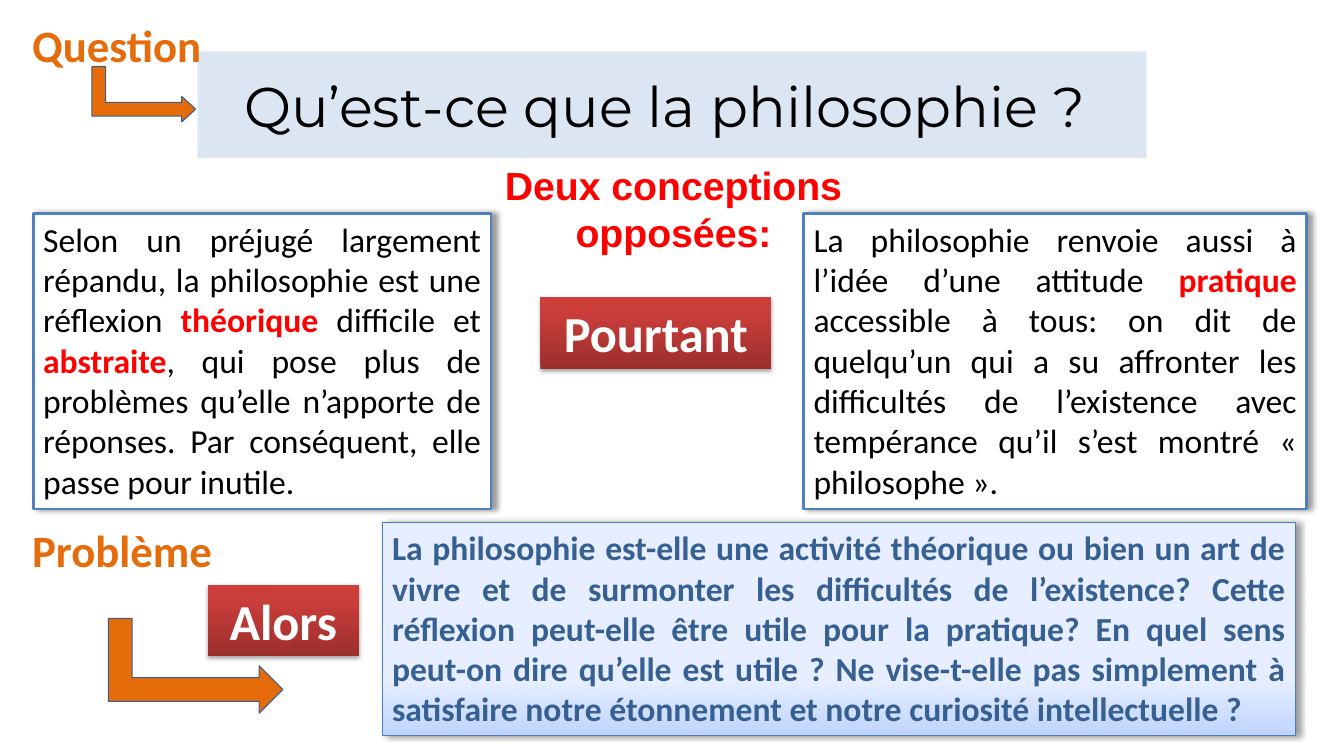
from dataclasses import dataclass

from lxml import etree
from pptx import Presentation
from pptx.dml.color import RGBColor
from pptx.enum.shapes import MSO_SHAPE
from pptx.enum.text import MSO_ANCHOR, MSO_AUTO_SIZE, PP_ALIGN
from pptx.oxml.ns import qn
from pptx.util import Inches, Pt

RECT = MSO_SHAPE.RECTANGLE
BENT_ARROW = MSO_SHAPE.BENT_UP_ARROW
TOP, MIDDLE = MSO_ANCHOR.TOP, MSO_ANCHOR.MIDDLE
GROW = MSO_AUTO_SIZE.SHAPE_TO_FIT_TEXT
LEFT, CENTER, JUSTIFY = PP_ALIGN.LEFT, PP_ALIGN.CENTER, PP_ALIGN.JUSTIFY

COLORS = {
    "black": "000000",
    "white": "FFFFFF",
    "red": "FF0000",
    "orange": "E46C0A",
    "arrow_line": "3A5F8C",
    "title_fill": "DCE6F2",
    "box_line": "4F81BD",
    "problem_line": "4B7EBC",
    "problem_text": "376092",
    "problem_bottom": "BFD4FF",
    "problem_top": "E6EEFF",
    "link_bottom": "9C2F2D",
    "link_top": "CB3E3A",
}


@dataclass(frozen=True)
class Shadow:
    blur: float
    distance: float
    direction: int
    opacity: int


@dataclass(frozen=True)
class Style:
    size: int
    color: str
    bold: bool = True
    align: PP_ALIGN = CENTER
    font: str = "Calibri"
    anchor: MSO_ANCHOR = TOP
    grow: bool = True
    wrap: bool = True
    fill: str = ""
    gradient: tuple[tuple[str, float], ...] = ()
    line: str = ""
    line_width: float = 0
    shadow: Shadow | None = None


@dataclass(frozen=True)
class Block:
    at: tuple[float, float, float, float]
    style: Style
    texts: tuple[str, ...]


@dataclass(frozen=True)
class Arrow:
    at: tuple[float, float, float, float]
    adjustments: tuple[float, float, float]


SIDE_SHADOW = Shadow(4, 3, 0, 40)
LOW_SHADOW = Shadow(3.1, 1.8, 90, 35)

HEADING = Style(28, "red", font="Arial")
TITLE = Style(40, "black", bold=False, font="Montserrat", anchor=MIDDLE,
              grow=False, fill="title_fill")
LABEL = Style(32, "orange", align=LEFT, wrap=False)
VIEW = Style(24, "black", bold=False, align=JUSTIFY, fill="white",
             line="box_line", line_width=2, shadow=SIDE_SHADOW)
LINK = Style(36, "white", gradient=(("link_bottom", 0), ("link_top", 0.8)),
             shadow=LOW_SHADOW)
PROBLEM = Style(24, "problem_text", align=JUSTIFY,
                gradient=(("problem_bottom", 0), ("problem_top", 0.26)),
                line="problem_line", line_width=0.75, shadow=SIDE_SHADOW)

BLOCKS = (
    Block((3.95, 1.55, 5.46, 0.57), HEADING, ("Deux conceptions opposées:",)),
    Block((0.33, 2.12, 4.54, 2.93), VIEW, (
        "Selon un préjugé largement répandu, la philosophie est une réflexion ",
        "théorique",
        " difficile et ",
        "abstraite",
        ", qui pose plus de problèmes qu’elle n’apporte de réponses. "
        "Par conséquent, elle passe pour inutile.",
    )),
    Block((5.36, 2.95, 2.29, 0.71), LINK, ("Pourtant",)),
    Block((7.97, 2.12, 4.99, 2.93), VIEW, (
        "La philosophie renvoie aussi à l’idée d’une attitude ",
        "pratique",
        " accessible à tous: on dit de quelqu’un qui a su affronter les "
        "difficultés de l’existence avec tempérance qu’il s’est montré "
        "« philosophe ». ",
    )),
    Block((1.96, 0.51, 9.41, 1.06), TITLE, ("Qu’est-ce que la philosophie ? ",)),
    Block((3.79, 5.18, 9.06, 2.12), PROBLEM, (
        "La philosophie est-elle une activité théorique ou bien un art de vivre "
        "et de surmonter les difficultés de l’existence? Cette réflexion "
        "peut-elle être utile pour la pratique? En quel sens peut-on dire "
        "qu’elle est utile ? Ne vise-t-elle pas simplement à satisfaire notre "
        "étonnement et notre curiosité intellectuelle ?",
    )),
    Block((2.06, 5.8, 1.5, 0.71), LINK, ("Alors",)),
    Block((0.22, 5.14, 2.27, 1.02), LABEL, ("Problème",)),
    Block((0.22, 0.13, 1.95, 0.7), LABEL, ("Question",)),
)

ARROWS = (
    Arrow((1.47, 5.74, 0.94, 1.73), (0.25, 0.25, 0.25)),
    Arrow((1.15, 0.42, 0.55, 1.03), (0.25, 0.23, 0.25)),
)


def rgb(name: str) -> RGBColor:
    return RGBColor.from_string(COLORS[name])


def add_shadow(sp, shadow: Shadow) -> None:
    effects = sp._element.spPr.find(qn("a:effectLst"))
    outer = etree.SubElement(
        effects, qn("a:outerShdw"), blurRad=str(Pt(shadow.blur)),
        dist=str(Pt(shadow.distance)), dir=str(shadow.direction * 60000),
        rotWithShape="0")
    color = etree.SubElement(outer, qn("a:srgbClr"), val=COLORS["black"])
    etree.SubElement(color, qn("a:alpha"), val=str(shadow.opacity * 1000))


def paint(sp, style: Style) -> None:
    sp.shadow.inherit = False
    if style.gradient:
        sp.fill.gradient()
        sp.fill.gradient_angle = 90
        for stop, (color, position) in zip(sp.fill.gradient_stops, style.gradient):
            stop.color.rgb = rgb(color)
            stop.position = position
    else:
        sp.fill.solid()
        sp.fill.fore_color.rgb = rgb(style.fill)
    if style.line:
        sp.line.color.rgb = rgb(style.line)
        sp.line.width = Pt(style.line_width)
    else:
        sp.line.fill.background()
    if style.shadow:
        add_shadow(sp, style.shadow)


def add_block(s, block: Block) -> None:
    style = block.style
    box = [Inches(v) for v in block.at]
    if style.fill or style.gradient:
        sp = s.shapes.add_shape(RECT, *box)
        paint(sp, style)
    else:
        sp = s.shapes.add_textbox(*box)
    tf = sp.text_frame
    tf.word_wrap = style.wrap
    tf.vertical_anchor = style.anchor
    if style.grow:
        tf.auto_size = GROW
    p = tf.paragraphs[0]
    p.alignment = style.align
    p.font.name = style.font
    p.font.size = Pt(style.size)
    p.font.bold = style.bold
    p.font.color.rgb = rgb(style.color)
    for i, text in enumerate(block.texts):
        r = p.add_run()
        r.text = text
        if i % 2:
            r.font.bold = True
            r.font.color.rgb = rgb("red")


def add_arrow(s, arrow: Arrow) -> None:
    sp = s.shapes.add_shape(BENT_ARROW, *[Inches(v) for v in arrow.at])
    sp.rotation = 90
    for i, value in enumerate(arrow.adjustments):
        sp.adjustments[i] = value
    paint(sp, Style(18, "white", fill="orange", line="arrow_line"))


def main() -> None:
    prs = Presentation()
    prs.slide_width, prs.slide_height = Inches(13.33), Inches(7.5)
    s = prs.slides.add_slide(prs.slide_layouts[6])
    for block in BLOCKS:
        add_block(s, block)
    for arrow in ARROWS:
        add_arrow(s, arrow)
    prs.save("out.pptx")


if __name__ == "__main__":
    main()
